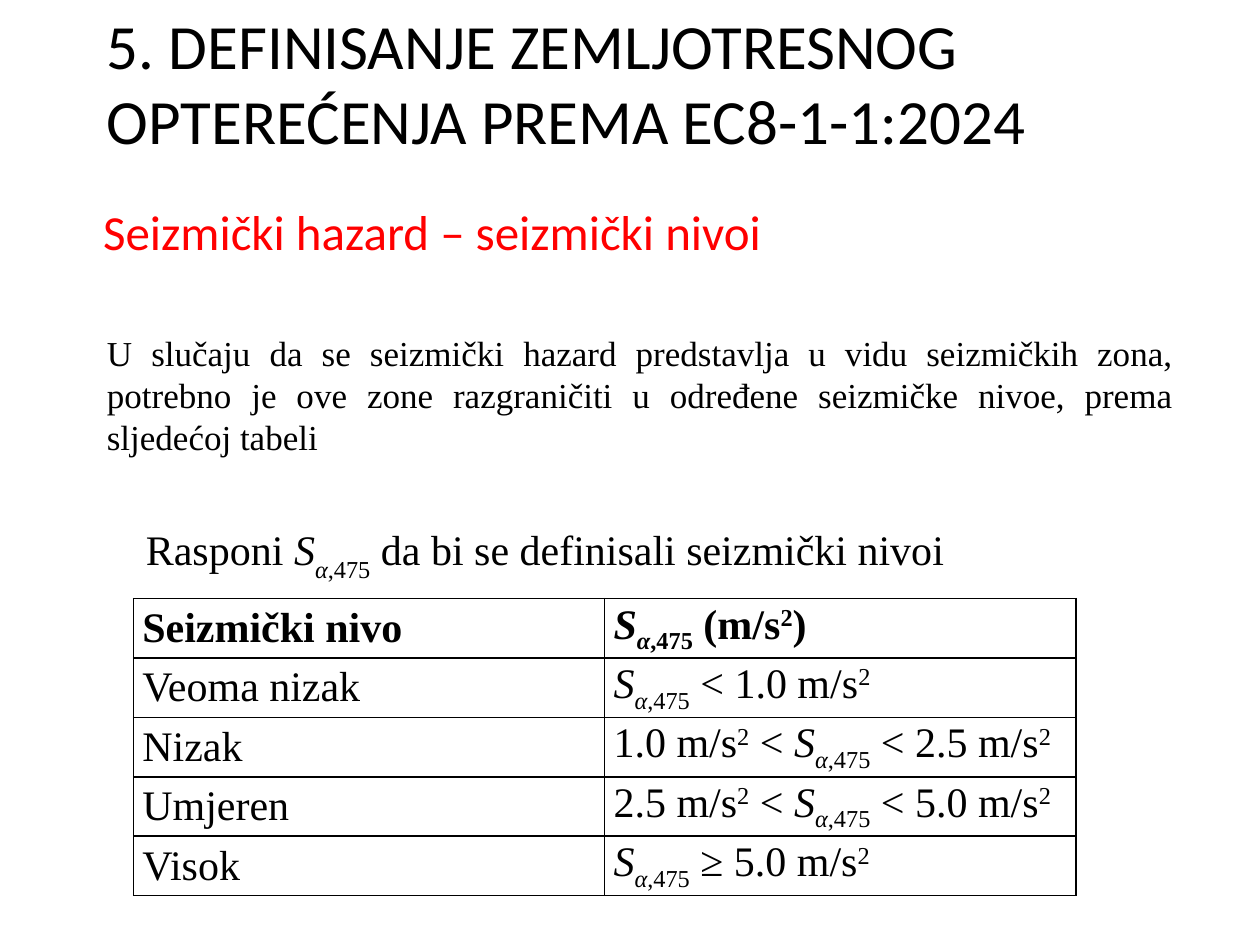
from lxml import etree
from pptx import Presentation
from pptx.dml.color import RGBColor
from pptx.enum.text import MSO_ANCHOR, MSO_AUTO_SIZE, PP_ALIGN
from pptx.oxml.ns import qn
from pptx.util import Inches, Pt

MIDDLE = MSO_ANCHOR.MIDDLE
FIT_SHAPE = MSO_AUTO_SIZE.SHAPE_TO_FIT_TEXT
JUSTIFY = PP_ALIGN.JUSTIFY

COLORS = {"text": "000000", "accent": "FF0000", "border": "000000"}
HEADING_FONT = "Calibri"
BODY_FONT = "Times New Roman"

# In formula texts, "|" separates the pieces; SYMBOL and SQUARED are special pieces
SYMBOL = "Sα"
SQUARED = "^2"
LEVELS = [
    ("Seizmički nivo", "|Sα| (m/s|^2|)"),
    ("Veoma nizak", "|Sα| < 1.0 m/s|^2"),
    ("Nizak", "1.0 m/s|^2| < |Sα| < 2.5 m/s|^2"),
    ("Umjeren", "2.5 m/s|^2| < |Sα| < 5.0 m/s|^2"),
    ("Visok", "|Sα| ≥ 5.0 m/s|^2"),
]


def add_run(paragraph, text, size, font_name, color="text", bold=False,
            italic=False, baseline=0):
    run = paragraph.add_run()
    run.text = text
    font = run.font
    font.size = Pt(size)
    font.name = font_name
    font.bold = bold
    font.italic = italic
    font.color.rgb = RGBColor.from_string(COLORS[color])
    if baseline:
        font._element.set("baseline", str(baseline * 1000))


def add_formula(paragraph, formula, bold=False, subscript=-25):
    """Write a text with the spectral symbol and squared units."""
    for piece in filter(None, formula.split("|")):
        if piece == SYMBOL:
            parts = [("S", True, 0), ("α", True, subscript), (",475", False, subscript)]
        elif piece == SQUARED:
            parts = [("2", False, 30)]
        else:
            parts = [(piece, False, 0)]
        for text, italic, baseline in parts:
            add_run(paragraph, text, 24, BODY_FONT, bold=bold,
                    italic=italic, baseline=baseline)


def add_text_box(slide, left, top, width, height, wrap=True):
    shape = slide.shapes.add_textbox(Inches(left), Inches(top), Inches(width), Inches(height))
    shape.text_frame.word_wrap = wrap
    shape.text_frame.auto_size = FIT_SHAPE
    return shape.text_frame


def add_heading(slide, left, top, width, height, text, size, color="text"):
    text_frame = add_text_box(slide, left, top, width, height)
    add_run(text_frame.paragraphs[0], text, size, HEADING_FONT, color)


def add_body(slide, left, top, width, height, text):
    paragraph = add_text_box(slide, left, top, width, height).paragraphs[0]
    paragraph.alignment = JUSTIFY
    paragraph.space_before = Pt(6)
    add_run(paragraph, text, 20, BODY_FONT)


def add_caption(slide, left, top, width, height, formula):
    text_frame = add_text_box(slide, left, top, width, height, wrap=False)
    text_frame.vertical_anchor = MIDDLE
    add_formula(text_frame.paragraphs[0], formula, subscript=-30)


def set_borders(cell):
    properties = cell._tc.get_or_add_tcPr()
    for index, side in enumerate(("a:lnL", "a:lnR", "a:lnT", "a:lnB")):
        line = etree.Element(qn(side), w=str(Pt(1)))
        fill = etree.SubElement(line, qn("a:solidFill"))
        etree.SubElement(fill, qn("a:srgbClr"), val=COLORS["border"])
        properties.insert(index, line)


def add_level_table(slide, left, top, width, height):
    table = slide.shapes.add_table(len(LEVELS), 2, Inches(left), Inches(top),
                                   Inches(width), Inches(height)).table
    table.first_row = False
    table.horz_banding = False
    for row_index, texts in enumerate(LEVELS):
        for column_index, text in enumerate(texts):
            cell = table.cell(row_index, column_index)
            cell.fill.background()
            cell.vertical_anchor = MIDDLE
            cell.margin_left = cell.margin_right = Inches(0.07)
            cell.margin_top = cell.margin_bottom = 0
            set_borders(cell)
            add_formula(cell.text_frame.paragraphs[0], text, bold=row_index == 0)


def main():
    presentation = Presentation()
    presentation.slide_width = Inches(10)
    presentation.slide_height = Inches(7.5)
    slide = presentation.slides.add_slide(presentation.slide_layouts[6])

    # Title and subtitle
    add_heading(slide, 0.75, 0, 8.66, 1.31,
                "5. DEFINISANJE ZEMLJOTRESNOG OPTEREĆENJA PREMA EC8-1-1:2024", 36)
    add_heading(slide, 0.72, 1.55, 8.66, 0.57,
                "Seizmički hazard – seizmički nivoi", 28, "accent")

    # Explanation
    add_body(slide, 0.75, 2.58, 8.66, 1.11,
             "U slučaju da se seizmički hazard predstavlja u vidu seizmičkih zona, "
             "potrebno je ove zone razgraničiti u određene seizmičke nivoe, "
             "prema sljedećoj tabeli")

    # Table with its caption
    add_caption(slide, 1.06, 4.14, 6.66, 0.5,
                "Rasponi |Sα| da bi se definisali seizmički nivoi")
    add_level_table(slide, 1.06, 4.75, 7.48, 2.36)

    presentation.save("out.pptx")


if __name__ == "__main__":
    main()
